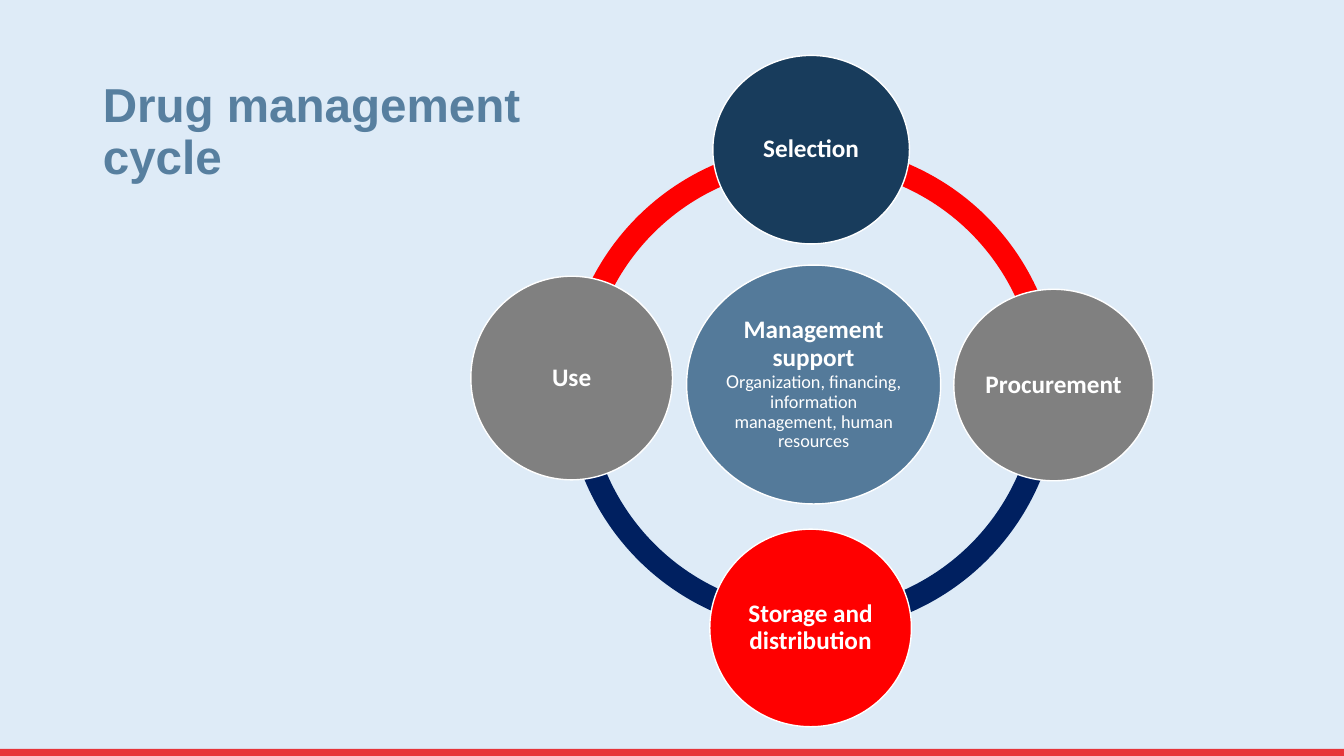
from pptx import Presentation
from pptx.dml.color import RGBColor
from pptx.enum.shapes import MSO_SHAPE as Shape
from pptx.enum.text import MSO_ANCHOR as Anchor, MSO_AUTO_SIZE as AutoSize, PP_ALIGN as Align
from pptx.util import Inches, Pt

SKY = RGBColor(0xDE, 0xEB, 0xF7)
CRIMSON = RGBColor(0xE7, 0x34, 0x39)
TITLE_BLUE = RGBColor(0x57, 0x7F, 0x9F)
STEEL = RGBColor(0x54, 0x7A, 0x9A)
DEEP_BLUE = RGBColor(0x18, 0x3C, 0x5C)
NAVY = RGBColor(0x00, 0x20, 0x60)
RED = RGBColor(0xFF, 0x00, 0x00)
GRAY = RGBColor(0x80, 0x80, 0x80)
WHITE = RGBColor(0xFF, 0xFF, 0xFF)


def add_run(paragraph, text, *, size=18, font="Calibri", color=WHITE, bold=True):
    run = paragraph.add_run()
    run.text = text
    run.font.size = Pt(size)
    run.font.name = font
    run.font.color.rgb = color
    run.font.bold = bold


class CycleSlide:
    """Holds the slide and the shared style of the cycle diagram."""

    ring_size = 4.93
    ring_thickness = 0.046
    inset = Inches(0.02)
    line_spacing = 0.9

    def __init__(self, deck):
        self.slide = deck.slides.add_slide(deck.slide_layouts[5])
        self.slide.background.fill.solid()
        self.slide.background.fill.fore_color.rgb = SKY

    def title(self, text, left, top, width, height):
        title = self.slide.shapes.title
        title.left, title.top = Inches(left), Inches(top)
        title.width, title.height = Inches(width), Inches(height)
        frame = title.text_frame
        frame.auto_size = AutoSize.NONE
        frame.word_wrap = True
        frame.vertical_anchor = Anchor.BOTTOM
        paragraph = frame.paragraphs[0]
        paragraph.alignment = Align.LEFT
        paragraph.line_spacing = self.line_spacing
        add_run(paragraph, text, size=34, font="Arial", color=TITLE_BLUE)

    def block(self, kind, left, top, width, height, fill):
        block = self.slide.shapes.add_shape(
            kind, Inches(left), Inches(top), Inches(width), Inches(height))
        block.shadow.inherit = False
        block.fill.solid()
        block.fill.fore_color.rgb = fill
        block.line.fill.background()
        return block

    def arc(self, left, top, start, end, fill):
        """Draw a ring segment between two clockwise angles in degrees."""
        arc = self.block(Shape.BLOCK_ARC, left, top, self.ring_size, self.ring_size, fill)
        # One degree is 60000 units, and an adjustment of 1 is 100000 units
        arc.adjustments[0] = start * 0.6
        arc.adjustments[1] = end * 0.6
        arc.adjustments[2] = self.ring_thickness

    def circle(self, left, top, width, height, fill, heading):
        circle = self.block(Shape.OVAL, left, top, width, height, fill)
        circle.line.color.rgb = WHITE
        circle.line.width = Pt(1)
        frame = circle.text_frame
        frame.word_wrap = True
        frame.vertical_anchor = Anchor.MIDDLE
        frame.margin_left = frame.margin_right = self.inset
        frame.margin_top = frame.margin_bottom = self.inset
        paragraph = frame.paragraphs[0]
        paragraph.alignment = Align.CENTER
        paragraph.line_spacing = self.line_spacing
        add_run(paragraph, heading)
        return paragraph


def main():
    deck = Presentation()
    deck.slide_width, deck.slide_height = Inches(13.33), Inches(7.5)
    cycle = CycleSlide(deck)

    # Title and bottom band
    cycle.block(Shape.RECTANGLE, 0, 7.43, 13.33, 0.07, CRIMSON)
    cycle.title("Drug management cycle", 0.92, 0.64, 5.02, 1.24)

    # Ring, one arc per quarter
    for left, top, start, end, fill in (
        (5.6, 1.43, 182.04, 270.04, RED),
        (5.61, 1.35, 90, 180.29, NAVY),
        (5.58, 1.35, 0, 90, NAVY),
        (5.58, 1.43, 269.97, 358.25, RED),
    ):
        cycle.arc(left, top, start, end, fill)

    # Centre of the cycle
    support = cycle.circle(6.81, 2.63, 2.52, 2.37, STEEL, "Management support ")
    add_run(support, "O", size=14, bold=False)
    add_run(support, "rganization, financing, information management, human resources",
            size=13, bold=False)

    # Stages, clockwise from the top
    for left, top, width, height, fill, stage in (
        (7.07, 0.55, 1.95, 1.87, DEEP_BLUE, "Selection"),
        (9.46, 2.87, 1.98, 1.9, GRAY, "Procurement"),
        (7.04, 5.25, 2, 1.96, RED, "Storage and distribution"),
        (4.67, 2.74, 2, 2.02, GRAY, "Use"),
    ):
        cycle.circle(left, top, width, height, fill, stage)

    deck.save("out.pptx")


if __name__ == "__main__":
    main()
